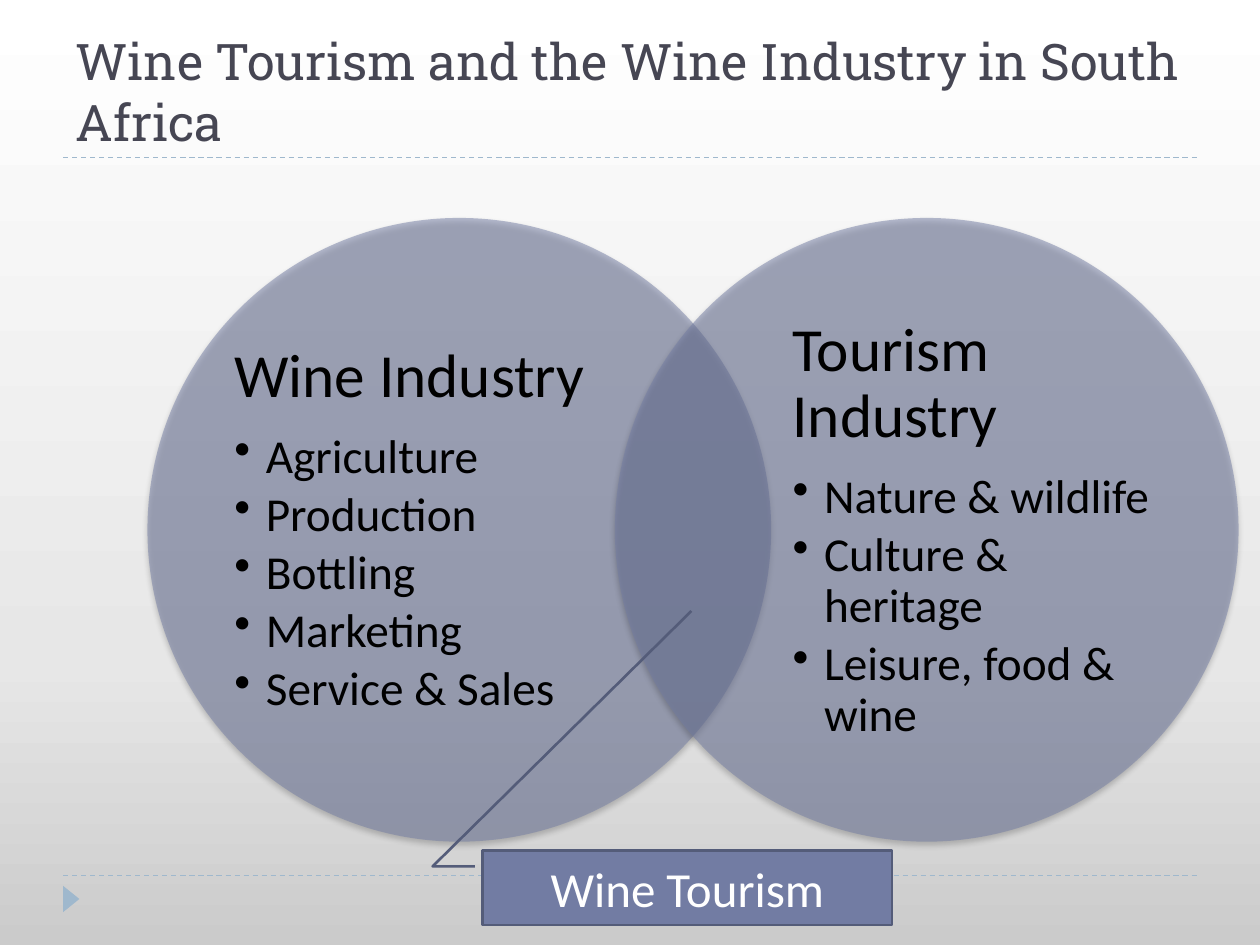
from copy import deepcopy
from dataclasses import dataclass

from lxml.etree import SubElement
from pptx import Presentation
from pptx.dml.color import RGBColor
from pptx.enum.dml import MSO_LINE
from pptx.enum.shapes import MSO_CONNECTOR, MSO_SHAPE
from pptx.enum.text import MSO_ANCHOR, MSO_AUTO_SIZE, PP_ALIGN
from pptx.oxml.ns import qn
from pptx.util import Inches, Pt

# Content
TITLE = "Wine Tourism and the Wine Industry in South Africa"
OVERLAP = "Wine Tourism"
CIRCLES = [
    ("Wine Industry",
     ["Agriculture", "Production", "Bottling", "Marketing", "Service & Sales"]),
    ("Tourism Industry",
     ["Nature & wildlife", "Culture & heritage", "Leisure, food & wine"]),
]


@dataclass(frozen=True)
class Theme:
    heading_font: str = "Roboto Slab"
    body_font: str = "Calibri"
    title_size: float = 28.8
    heading_size: float = 35
    bullet_size: float = 27
    callout_size: float = 28
    title: str = "464653"
    text: str = "000000"
    light: str = "FFFFFF"
    fill: str = "727CA3"
    outline: str = "545C79"
    accent: str = "9FB8CD"
    background: tuple = ((0, "CBCBCB"), (0.3, "E7E7E7"), (1, "FFFFFF"))


THEME = Theme()

# Layout in inches
WIDTH, HEIGHT = 10, 7.5
MARGIN = WIDTH * 0.05
TITLE_RULE, FOOTER_RULE = 1.25, 6.95
DIAMETER, CIRCLE_TOP = 4.95, 1.73
CIRCLE_LEFTS = (1.17, 4.88)
TEXT_LEFTS = (1.86, 6.29)
TEXT_TOP, TEXT_WIDTH, TEXT_HEIGHT = 2.32, 2.85, 3.78
CALLOUT_BOX = (3.83, 6.75, 3.25, 0.59)
CALLOUT_POINTS = (0.214, -0.019, 0.214, -0.122, -3.222, 0.51)


def box(*lengths):
    return [Inches(length) for length in lengths]


def set_values(target, values):
    for name, value in values.items():
        setattr(target, name, value)


def paint(fill, color):
    fill.solid()
    fill.fore_color.rgb = RGBColor.from_string(color)


def write(paragraph, text, font, size, color):
    run = paragraph.add_run()
    run.text = text
    set_values(run.font, {"name": font, "size": Pt(size)})
    run.font.color.rgb = RGBColor.from_string(color)


def add_shape(shapes, kind, place, color):
    shape = shapes.add_shape(kind, *box(*place))
    shape.shadow.inherit = False
    paint(shape.fill, color)
    shape.line.fill.background()
    return shape


def add_background(slide):
    fill = slide.background.fill
    fill.gradient()
    fill.gradient_angle = 90
    stop_list = slide._element.find(".//" + qn("a:gsLst"))
    stop_list.append(deepcopy(stop_list[-1]))
    for stop, (position, color) in zip(fill.gradient_stops, THEME.background):
        stop.position = position
        stop.color.rgb = RGBColor.from_string(color)


def add_rule(slide, top):
    rule = slide.shapes.add_connector(
        MSO_CONNECTOR.STRAIGHT, *box(MARGIN, top, WIDTH - MARGIN, top))
    set_values(rule.line, {"width": Pt(0.75), "dash_style": MSO_LINE.DASH})
    rule.line.color.rgb = RGBColor.from_string(THEME.accent)
    SubElement(rule._element.spPr, qn("a:effectLst"))


def add_circle(shapes, left):
    circle = add_shape(shapes, MSO_SHAPE.OVAL,
                       (left, CIRCLE_TOP, DIAMETER, DIAMETER), THEME.fill)
    properties = circle._element.spPr
    color = properties.find(qn("a:solidFill"))[0]
    SubElement(color, qn("a:alpha"), val="50000")
    shadow = SubElement(
        properties.find(qn("a:effectLst")), qn("a:outerShdw"),
        blurRad=str(Pt(3)), dist=str(Pt(2)), dir="5400000", rotWithShape="0")
    black = SubElement(shadow, qn("a:srgbClr"), val="000000")
    SubElement(black, qn("a:alpha"), val="40000")


def space_after(paragraph, percent):
    paragraph.line_spacing = 0.9
    spacing = SubElement(paragraph._p.get_or_add_pPr(), qn("a:spcAft"))
    SubElement(spacing, qn("a:spcPct"), val=str(percent * 1000))


def add_list(shapes, left, heading, items):
    frame = shapes.add_textbox(
        *box(left, TEXT_TOP, TEXT_WIDTH, TEXT_HEIGHT)).text_frame
    set_values(frame, {
        "word_wrap": True, "vertical_anchor": MSO_ANCHOR.MIDDLE,
        "margin_left": 0, "margin_top": 0,
        "margin_right": 0, "margin_bottom": 0})
    first = frame.paragraphs[0]
    space_after(first, 35)
    write(first, heading, THEME.body_font, THEME.heading_size, THEME.text)
    for item in items:
        paragraph = frame.add_paragraph()
        paragraph.level = 1
        space_after(paragraph, 15)
        properties = paragraph._p.get_or_add_pPr()
        properties.set("marL", str(Inches(0.25)))
        properties.set("indent", str(-Inches(0.25)))
        SubElement(properties, qn("a:buChar"), char="•")
        write(paragraph, item, THEME.body_font, THEME.bullet_size, THEME.text)


def add_title(slide):
    title = slide.shapes.title
    places = box(MARGIN, 0.17, WIDTH - 2 * MARGIN, TITLE_RULE - 0.17)
    set_values(title, dict(zip(("left", "top", "width", "height"), places)))
    set_values(title.text_frame, {
        "word_wrap": True, "auto_size": MSO_AUTO_SIZE.NONE,
        "vertical_anchor": MSO_ANCHOR.BOTTOM})
    paragraph = title.text_frame.paragraphs[0]
    paragraph.alignment = PP_ALIGN.LEFT
    write(paragraph, TITLE, THEME.heading_font, THEME.title_size, THEME.title)


def add_callout(slide):
    callout = add_shape(slide.shapes, MSO_SHAPE.LINE_CALLOUT_2,
                        CALLOUT_BOX, THEME.fill)
    for index, value in enumerate(CALLOUT_POINTS):
        callout.adjustments[index] = value
    callout.line.width = Pt(1.5)
    paint(callout.line.fill, THEME.outline)
    set_values(callout.text_frame, {
        "word_wrap": True, "vertical_anchor": MSO_ANCHOR.MIDDLE})
    paragraph = callout.text_frame.paragraphs[0]
    paragraph.alignment = PP_ALIGN.CENTER
    write(paragraph, OVERLAP, THEME.body_font, THEME.callout_size, THEME.light)


def main():
    presentation = Presentation()
    set_values(presentation, {
        "slide_width": Inches(WIDTH), "slide_height": Inches(HEIGHT)})
    slide = presentation.slides.add_slide(presentation.slide_layouts[5])

    # Backdrop and title
    add_background(slide)
    for top in (FOOTER_RULE, TITLE_RULE):
        add_rule(slide, top)
    marker = add_shape(slide.shapes, MSO_SHAPE.ISOSCELES_TRIANGLE,
                       (0.46, 7.07, 0.21, 0.13), THEME.accent)
    marker.rotation = 90
    add_title(slide)

    # Overlapping circles with their lists
    diagram = slide.shapes.add_group_shape().shapes
    for circle_left, text_left, (heading, items) in zip(
            CIRCLE_LEFTS, TEXT_LEFTS, CIRCLES):
        add_circle(diagram, circle_left)
        add_list(diagram, text_left, heading, items)

    # Label for the overlap
    add_callout(slide)
    presentation.save("out.pptx")


if __name__ == "__main__":
    main()
